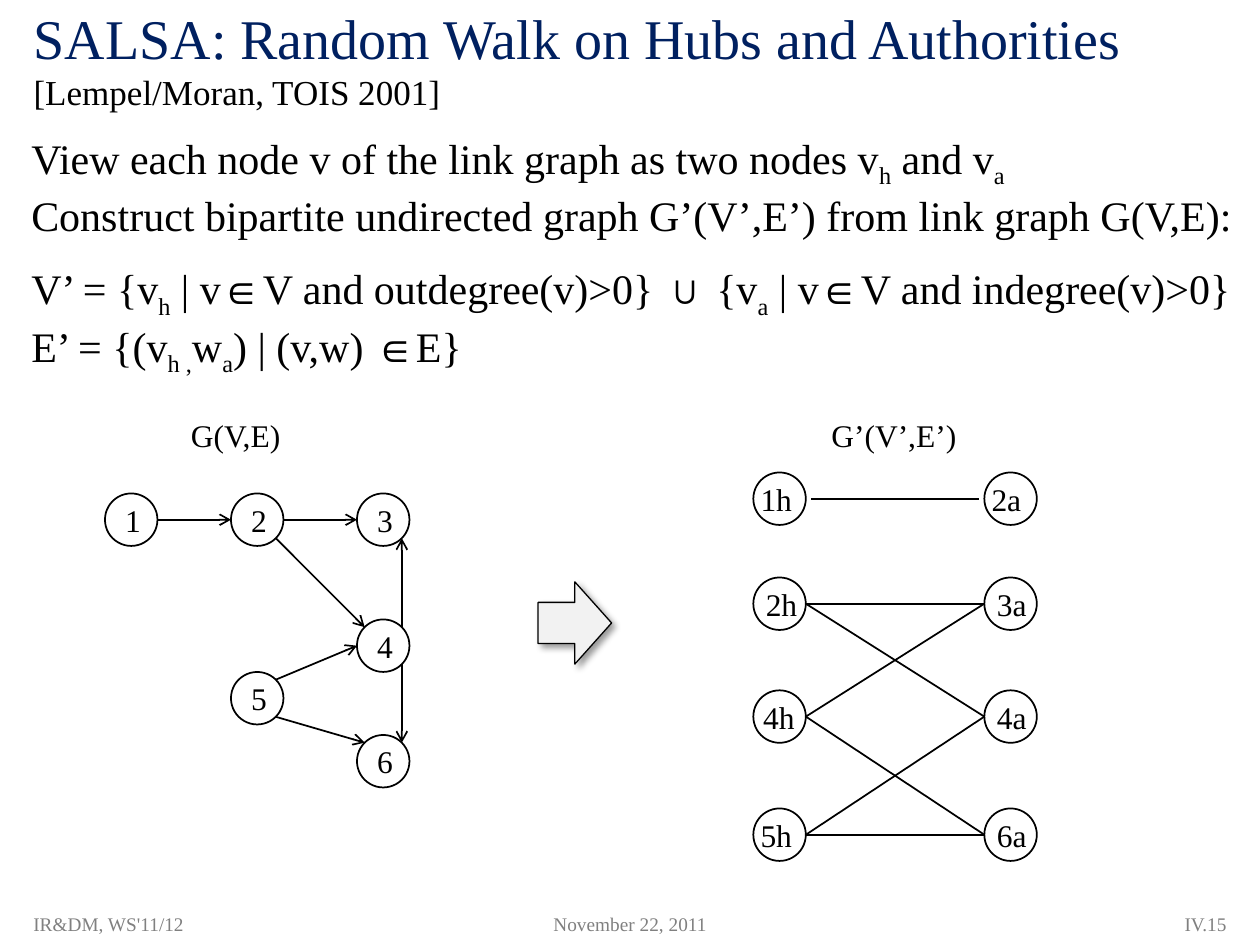
from dataclasses import dataclass
from math import copysign, sqrt

from lxml import etree
from pptx import Presentation
from pptx.dml.color import RGBColor
from pptx.enum.shapes import MSO_CONNECTOR, MSO_SHAPE
from pptx.enum.text import MSO_ANCHOR, PP_ALIGN
from pptx.oxml.ns import qn
from pptx.util import Pt

STRAIGHT = MSO_CONNECTOR.STRAIGHT
OVAL, RIGHT_ARROW = MSO_SHAPE.OVAL, MSO_SHAPE.RIGHT_ARROW
LEFT, CENTER, RIGHT = PP_ALIGN.LEFT, PP_ALIGN.CENTER, PP_ALIGN.RIGHT
TOP, MIDDLE = MSO_ANCHOR.TOP, MSO_ANCHOR.MIDDLE

DIAMETER = 30
RADIUS = DIAMETER / 2


def color(value):
    return RGBColor.from_string(value)


def points(*lengths):
    return [Pt(length) for length in lengths]


def rim(corner, side):
    across, down = side
    reach = RADIUS / sqrt(2) if across and down else RADIUS
    return [
        start + RADIUS + (copysign(reach, step) if step else 0)
        for start, step in zip(corner, side)
    ]


@dataclass
class Painter:
    page: object
    font: str = "Times New Roman"
    ink: str = "000000"
    line_width: float = 1

    def format_span(self, span, size, ink=None):
        span.font.name = self.font
        span.font.size = Pt(size)
        span.font.color.rgb = color(ink or self.ink)

    def title(self, area, heading, source):
        box = self.page.shapes.title
        box.left, box.top, box.width, box.height = points(*area)
        frame = box.text_frame
        frame.text = f"{heading}\v{source}"
        frame.vertical_anchor = MIDDLE
        para = frame.paragraphs[0]
        para.alignment = LEFT
        self.format_span(para.runs[0], 32, "002060")
        self.format_span(para.runs[1], 20)

    def text(self, area, content, size, ink=None, align=LEFT, anchor=TOP, wrap=True):
        box = self.page.shapes.add_textbox(*points(*area))
        frame = box.text_frame
        frame.text = content
        frame.word_wrap = wrap
        frame.vertical_anchor = anchor
        for para in frame.paragraphs:
            para.alignment = align
            for span in para.runs:
                self.format_span(span, size, ink)
        return frame

    def formulas(self, area, lines, size):
        frame = self.text(area, "\n" * (len(lines) - 1), size)
        for para, (gap, pieces) in zip(frame.paragraphs, lines):
            para.space_before = Pt(gap)
            for index, piece in enumerate(pieces):
                span = para.add_run()
                span.text = piece
                self.format_span(span, size)
                if index % 2:
                    span.font._element.set("baseline", "-25000")

    def shape(self, kind, area, fill=None, line_width=None):
        shape = self.page.shapes.add_shape(kind, *points(*area))
        shape.shadow.inherit = False
        if fill:
            shape.fill.solid()
            shape.fill.fore_color.rgb = color(fill)
        else:
            shape.fill.background()
        shape.line.color.rgb = color(self.ink)
        shape.line.width = Pt(line_width or self.line_width)
        return shape

    def node(self, corner, label=""):
        frame = self.shape(OVAL, (*corner, DIAMETER, DIAMETER)).text_frame
        if label:
            frame.text = label
            frame.word_wrap = False
            frame.vertical_anchor = MIDDLE
            frame.margin_left = Pt(2)
            frame.margin_right = frame.margin_top = frame.margin_bottom = 0
            para = frame.paragraphs[0]
            para.alignment = CENTER
            self.format_span(para.runs[0], 18)

    def line(self, start, end, arrow=False):
        line = self.page.shapes.add_connector(STRAIGHT, *points(*start, *end))
        line.line.color.rgb = color(self.ink)
        line.line.width = Pt(self.line_width)
        if arrow:
            etree.SubElement(line.line._get_or_add_ln(), qn("a:tailEnd"), type="arrow")
        etree.SubElement(line._element.spPr, qn("a:effectLst"))

    def block_arrow(self, area):
        arrow = self.shape(RIGHT_ARROW, area, "F2F2F2", 0.75)
        effects = arrow._element.spPr.find(qn("a:effectLst"))
        shadow = etree.SubElement(
            effects, qn("a:outerShdw"), blurRad=str(Pt(4)), dist=str(Pt(3)),
            dir=str(45 * 60000), algn="tl", rotWithShape="0",
        )
        shade = etree.SubElement(shadow, qn("a:srgbClr"), val=self.ink)
        etree.SubElement(shade, qn("a:alpha"), val="40000")


def draw_link_graph(painter):
    nodes = {
        "1": (60, 282), "2": (132, 282), "3": (204, 282),
        "4": (204, 354), "5": (132, 384), "6": (204, 420),
    }
    east, west = (1, 0), (-1, 0)
    northeast, southeast, northwest = (1, -1), (1, 1), (-1, -1)
    edges = [
        ("1", east, "2", west), ("2", east, "3", west),
        ("2", southeast, "4", northwest), ("4", northeast, "3", southeast),
        ("4", southeast, "6", northeast), ("5", northeast, "4", west),
        ("5", southeast, "6", northwest),
    ]
    painter.text((102, 234, 70.5, 29), "G(V,E)", 18, wrap=False)
    for label, corner in nodes.items():
        painter.node(corner, label)
    for source, exit_side, target, entry_side in edges:
        painter.line(rim(nodes[source], exit_side), rim(nodes[target], entry_side), True)


def draw_bipartite_graph(painter):
    rows = [270, 330, 394.5, 462]
    hubs = dict(zip(["1h", "2h", "4h", "5h"], [(430.5, top) for top in rows]))
    authorities = dict(zip(["2a", "3a", "4a", "6a"], [(562.5, top) for top in rows]))
    label_shifts = {"1h": -3, "4h": -1.5, "5h": -3, "2a": -3}
    edges = [
        ("1h", "2a", 3), ("2h", "3a", 0), ("2h", "4a", 0), ("4h", "3a", 0),
        ("4h", "6a", 0), ("5h", "4a", 0), ("5h", "6a", 0),
    ]
    painter.text((468, 234, 91.5, 29), "G’(V’,E’)", 18, wrap=False)
    for label, (left, top) in (hubs | authorities).items():
        painter.node((left, top))
        label_left = left + label_shifts.get(label, 0)
        painter.text((label_left, top + 1, 32.5, 29), label, 18, wrap=False)
    for hub, authority, gap in edges:
        start_x, start_y = rim(hubs[hub], (1, 0))
        end_x, end_y = rim(authorities[authority], (-1, 0))
        painter.line((start_x + gap, start_y), (end_x - gap, end_y))


def main():
    deck = Presentation()
    deck.slide_width, deck.slide_height = points(720, 540)
    painter = Painter(deck.slides.add_slide(deck.slide_layouts[5]))

    painter.title(
        (12, 6, 696, 54),
        "SALSA: Random Walk on Hubs and Authorities",
        "[Lempel/Moran, TOIS 2001]",
    )
    painter.formulas((10.8, 72, 703.5, 138), [
        (0, ["View each node v of the link graph as two nodes v", "h", " and v", "a"]),
        (0, ["Construct bipartite undirected graph G’(V’,E’) from link graph G(V,E):"]),
        (13, ["V’ = {v", "h", " | v∈V and outdegree(v)>0} ∪ {v", "a",
              " | v∈V and indegree(v)>0}"]),
        (0, ["E’ = {(v", "h ,", "w", "a", ") | (v,w) ∈E}"]),
    ], 24)

    draw_link_graph(painter)
    painter.block_arrow((307.5, 332.5, 42, 47))
    draw_bipartite_graph(painter)

    for left, width, content, align in [
        (12, 216, "IR&DM, WS'11/12", LEFT),
        (276, 168, "November 22, 2011", CENTER),
        (552, 156, "IV.15", RIGHT),
    ]:
        painter.text((left, 516, width, 24), content, 11, "808080", align, MIDDLE)

    deck.save("out.pptx")


if __name__ == "__main__":
    main()
